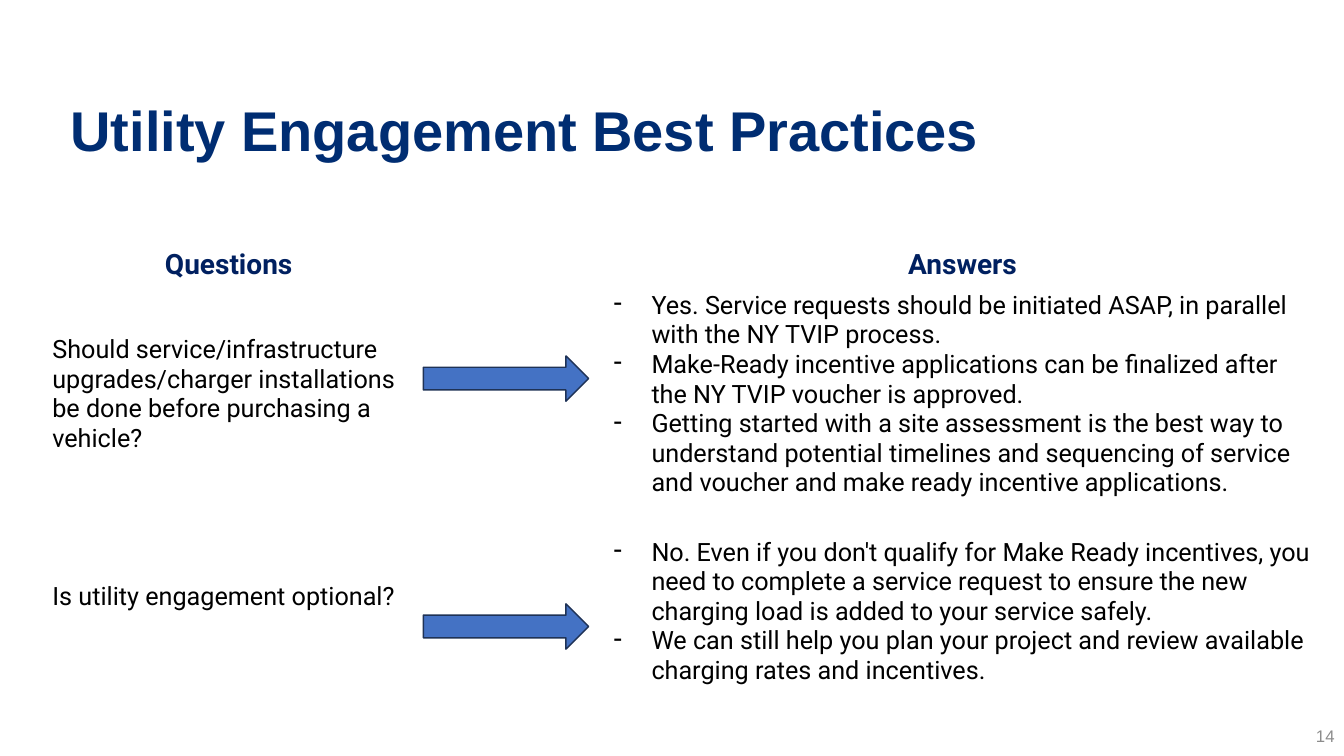
from dataclasses import dataclass
from typing import Any

from lxml.etree import SubElement
from pptx import Presentation
from pptx.dml.color import RGBColor
from pptx.enum.shapes import MSO_SHAPE
from pptx.enum.text import MSO_ANCHOR, MSO_AUTO_SIZE, PP_ALIGN
from pptx.oxml.ns import qn
from pptx.util import Pt


@dataclass(frozen=True)
class Theme:
    title: RGBColor = RGBColor(0x00, 0x2D, 0x72)
    heading: RGBColor = RGBColor(0x00, 0x20, 0x60)
    text: RGBColor = RGBColor(0x00, 0x00, 0x00)
    page_number: RGBColor = RGBColor(0x8C, 0x8C, 0x8C)
    arrow_fill: RGBColor = RGBColor(0x44, 0x72, 0xC4)
    arrow_line: RGBColor = RGBColor(0x1E, 0x32, 0x56)
    title_size: int = 40
    heading_size: int = 20
    text_size: int = 18
    page_number_size: int = 12
    title_font: str = "Arial"
    table_font: str = "Roboto"


@dataclass(frozen=True)
class Topic:
    question: str
    answers: tuple[str, ...]
    row_height: float
    answer_top_margin: float
    arrow_top: float


THEME = Theme()
TITLE_FORMAT = dict(name=THEME.title_font, size=Pt(THEME.title_size), bold=True, color=THEME.title)
HEADING_FORMAT = dict(name=THEME.table_font, size=Pt(THEME.heading_size), bold=True, color=THEME.heading)
TEXT_FORMAT = dict(name=THEME.table_font, size=Pt(THEME.text_size), bold=False, color=THEME.text)
NUMBER_FORMAT = dict(name=THEME.title_font, size=Pt(THEME.page_number_size), bold=False,
                     color=THEME.page_number)

COLUMN_WIDTHS = (266.4, 134.6, 512.8)
HEADING_HEIGHT = 30.6
BULLET_INDENT = 27
TOPICS = (
    Topic(
        "Should service/infrastructure upgrades/charger installations be done before purchasing a vehicle?",
        (
            "Yes. Service requests should be initiated ASAP, in parallel with the NY TVIP process.",
            "Make-Ready incentive applications can be finalized after the NY TVIP voucher is approved.",
            "Getting started with a site assessment is the best way to understand potential timelines "
            "and sequencing of service and voucher and make ready incentive applications.",
        ),
        row_height=155, answer_top_margin=3.6, arrow_top=254.2,
    ),
    Topic(
        "Is utility engagement optional?",
        (
            "No. Even if you don't qualify for Make Ready incentives, you need to complete a service "
            "request to ensure the new charging load is added to your service safely.",
            "We can still help you plan your project and review available charging rates and incentives.",
        ),
        row_height=134, answer_top_margin=24.7, arrow_top=431.3,
    ),
)


def write(paragraph: Any, text: str, text_format: dict[str, Any],
          align: PP_ALIGN = PP_ALIGN.LEFT) -> None:
    paragraph.alignment = align
    font = paragraph.add_run().font
    paragraph.runs[0].text = text
    for name, value in text_format.items():
        if name == "color":
            font.color.rgb = value
        else:
            setattr(font, name, value)


def add_dash(paragraph: Any) -> None:
    properties = paragraph._p.get_or_add_pPr()
    properties.set("marL", str(Pt(BULLET_INDENT)))
    properties.set("indent", str(-Pt(BULLET_INDENT)))
    bullet_color = SubElement(properties, qn("a:buClr"))
    SubElement(bullet_color, qn("a:srgbClr"), val=str(THEME.text))
    SubElement(properties, qn("a:buChar"), char="-")


def add_title(slide: Any, text: str) -> None:
    title = slide.shapes.title
    placement = dict(left=Pt(43.2), top=Pt(43.2), width=Pt(828), height=Pt(104.4))
    for name, value in placement.items():
        setattr(title, name, value)
    frame = title.text_frame
    frame.auto_size = MSO_AUTO_SIZE.NONE
    frame.vertical_anchor = MSO_ANCHOR.MIDDLE
    frame.paragraphs[0].line_spacing = 0.9
    write(frame.paragraphs[0], text, TITLE_FORMAT)


def add_answers(cell: Any, topic: Topic) -> None:
    cell.margin_top = Pt(topic.answer_top_margin)
    frame = cell.text_frame
    for index, answer in enumerate(topic.answers):
        paragraph = frame.add_paragraph() if index else frame.paragraphs[0]
        add_dash(paragraph)
        write(paragraph, answer, TEXT_FORMAT)


def add_topic_table(slide: Any) -> None:
    heights = (HEADING_HEIGHT, *(topic.row_height for topic in TOPICS))
    table = slide.shapes.add_table(
        len(heights), len(COLUMN_WIDTHS), Pt(30.2), Pt(173.5),
        Pt(sum(COLUMN_WIDTHS)), Pt(sum(heights))).table
    table.first_row = table.horz_banding = False
    for column, width in zip(table.columns, COLUMN_WIDTHS):
        column.width = Pt(width)
    for row, height in zip(table.rows, heights):
        row.height = Pt(height)
    for cell in table.iter_cells():
        cell.fill.background()
        cell.vertical_anchor = MSO_ANCHOR.MIDDLE

    for column, heading in ((0, "Questions"), (2, "Answers")):
        write(table.cell(0, column).text_frame.paragraphs[0], heading, HEADING_FORMAT, PP_ALIGN.CENTER)
    for row, topic in enumerate(TOPICS, start=1):
        write(table.cell(row, 0).text_frame.paragraphs[0], topic.question, TEXT_FORMAT)
        add_answers(table.cell(row, 2), topic)


def add_arrow(slide: Any, top: float) -> None:
    arrow = slide.shapes.add_shape(MSO_SHAPE.RIGHT_ARROW, Pt(302.4), Pt(top), Pt(118.1), Pt(32.4))
    arrow.shadow.inherit = False
    arrow.fill.solid()
    arrow.fill.fore_color.rgb = THEME.arrow_fill
    arrow.line.color.rgb = THEME.arrow_line
    arrow.line.width = Pt(1)


def add_page_number(slide: Any, number: str) -> None:
    frame = slide.shapes.add_textbox(Pt(917.3), Pt(511.2), Pt(42.5), Pt(28.8)).text_frame
    frame.word_wrap = True
    frame.vertical_anchor = MSO_ANCHOR.MIDDLE
    # The number sits almost at the slide edge
    frame.margin_right = Pt(7.2)
    write(frame.paragraphs[0], number, NUMBER_FORMAT, PP_ALIGN.RIGHT)
    frame.margin_right = Pt(7.2 if len(number) > 2 else 6.5)


def main() -> None:
    presentation = Presentation()
    presentation.slide_width, presentation.slide_height = Pt(960), Pt(540)
    slide = presentation.slides.add_slide(presentation.slide_layouts[5])

    # Title and question table
    add_title(slide, "Utility Engagement Best Practices")
    add_topic_table(slide)

    # Arrows from questions to answers
    for topic in TOPICS:
        add_arrow(slide, topic.arrow_top)

    # Page number
    add_page_number(slide, "14")
    presentation.save("out.pptx")


if __name__ == "__main__":
    main()
